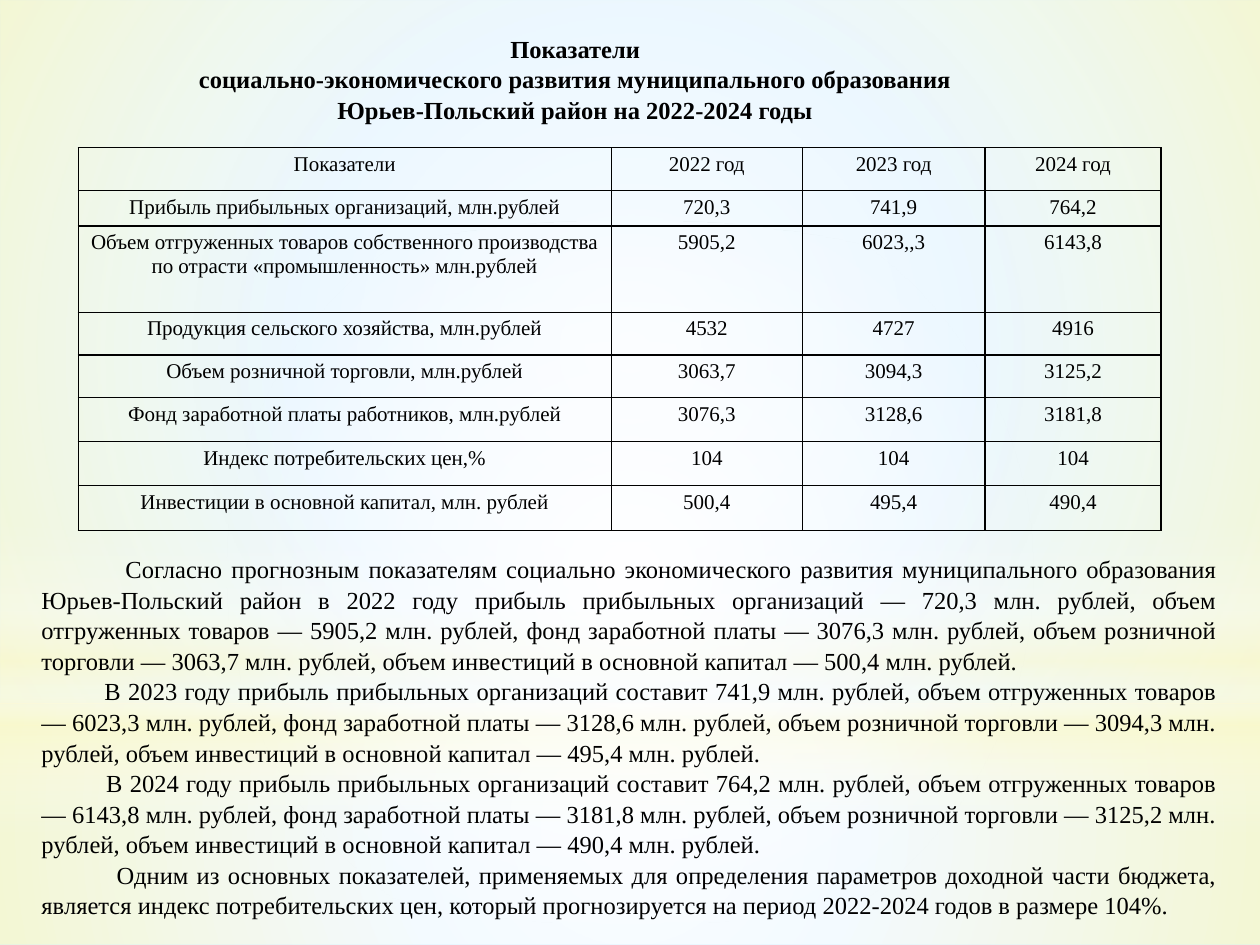
import pptx
import pptx.util
import pptx.dml.color
import pptx.enum.shapes
import pptx.enum.text
import pptx.oxml
import pptx.oxml.ns

Pt = pptx.util.Pt
ALIGN = pptx.enum.text.PP_ALIGN
SHAPE = pptx.enum.shapes.MSO_SHAPE
NS = pptx.oxml.ns.nsdecls("a")


def color(hex_string):
    return pptx.dml.color.RGBColor.from_string(hex_string)


def write(frame, text, size=14, bold=False, align=ALIGN.CENTER, indent=0,
          spacing=None, first=True):
    paragraph = frame.paragraphs[0] if first else frame.add_paragraph()
    if indent:
        paragraph._p.get_or_add_pPr().set("indent", str(Pt(indent)))
    paragraph.alignment = align
    paragraph.line_spacing = spacing
    run = paragraph.add_run()
    run.text = text
    run.font.name = "Times New Roman"
    run.font.size = Pt(size)
    run.font.bold = bold
    run.font.color.rgb = color("000000")


deck = pptx.Presentation()
deck.slide_width, deck.slide_height = Pt(720), Pt(540)
slide = deck.slides.add_slide(deck.slide_layouts[6])

# Background: soft glows over pale blue; stops are position, colour, opacity
slide.background.fill.solid()
slide.background.fill.fore_color.rgb = color("CCECFF")
WHITE, CREAM = "FFFFFF", "FEFAC9"
RADIAL = ('<a:path path="circle"><a:fillToRect l="50000" t="50000" '
          'r="50000" b="50000"/></a:path>')
LINEAR = '<a:lin ang="5400000" scaled="0"/>'
glows = [
    (SHAPE.RECTANGLE, 402, 138, RADIAL,
     [(0, WHITE, 91), (37, WHITE, 76), (100, CREAM, 79)]),
    (SHAPE.RECTANGLE, 0, 402, RADIAL,
     [(0, WHITE, 89), (48, WHITE, 62), (100, CREAM, 79)]),
    (SHAPE.RECTANGLE, 297, 180, LINEAR,
     [(0, WHITE, 0), (29, WHITE, 30), (45, CREAM, 40),
      (55, WHITE, 26), (65, CREAM, 60), (100, WHITE, 0)]),
    (SHAPE.OVAL, 126, 402, RADIAL, [(0, WHITE, 100), (56, WHITE, 0)]),
]
for kind, top, height, direction, stops in glows:
    glow = slide.shapes.add_shape(kind, 0, Pt(top), Pt(720), Pt(height))
    glow.shadow.inherit = False
    glow.line.fill.background()
    glow.fill.background()
    stop_xml = "".join(
        f'<a:gs pos="{place * 1000}"><a:srgbClr val="{color(tint)}">'
        f'<a:alpha val="{opacity * 1000}"/></a:srgbClr></a:gs>'
        for place, tint, opacity in stops)
    gradient = pptx.oxml.parse_xml(
        f'<a:gradFill {NS} rotWithShape="1"><a:gsLst>{stop_xml}</a:gsLst>'
        f'{direction}</a:gradFill>')
    properties = glow._element.spPr
    properties.replace(properties.find(pptx.oxml.ns.qn("a:noFill")), gradient)

# Table of indicators
indicators = [
    ("Показатели", "2022 год", "2023 год", "2024 год"),
    ("Прибыль прибыльных организаций, млн.рублей", "720,3", "741,9", "764,2"),
    ("Объем отгруженных товаров собственного производства по отрасти "
     "«промышленность» млн.рублей", "5905,2", "6023,,3", "6143,8"),
    ("Продукция сельского хозяйства, млн.рублей", "4532", "4727", "4916"),
    ("Объем розничной торговли, млн.рублей", "3063,7", "3094,3", "3125,2"),
    ("Фонд заработной платы работников, млн.рублей",
     "3076,3", "3128,6", "3181,8"),
    ("Индекс потребительских цен,%", "104", "104", "104"),
    ("Инвестиции в основной капитал, млн. рублей", "500,4", "495,4", "490,4"),
]
column_widths = [304.6, 109.2, 104.4, 100.6]
row_heights = [24.4, 20.4, 49.2, 24.5, 24.5, 25.2, 24.9, 25.8]
table = slide.shapes.add_table(
    len(row_heights), len(column_widths), Pt(44.7), Pt(84.4),
    Pt(sum(column_widths)), Pt(sum(row_heights))).table
table.first_row = table.horz_banding = False
for column, width in zip(table.columns, column_widths):
    column.width = Pt(width)
for row, height, values in zip(table.rows, row_heights, indicators):
    row.height = Pt(height)
    for cell, value in zip(row.cells, values):
        cell.margin_left = cell.margin_right = Pt(3)
        cell.margin_top = cell.margin_bottom = Pt(3)
        for side in ("lnL", "lnR", "lnT", "lnB"):
            cell._tc.get_or_add_tcPr().append(pptx.oxml.parse_xml(
                f'<a:{side} {NS} w="{Pt(0.75)}"><a:solidFill><a:srgbClr '
                f'val="{color("000000")}"/></a:solidFill></a:{side}>'))
        cell.fill.background()
        write(cell.text_frame, value, size=12)

# Heading
heading = slide.shapes.add_textbox(Pt(50.4), Pt(15), Pt(556.6), Pt(58)).text_frame
heading.word_wrap = True
heading_lines = [
    "Показатели",
    "социально-экономического развития муниципального образования",
    "Юрьев-Польский район на 2022-2024 годы",
]
for number, line in enumerate(heading_lines):
    write(heading, line, bold=True, spacing=1.04, first=number == 0)

# Forecast commentary: first-line indent and text
forecast = slide.shapes.add_textbox(Pt(16.6), Pt(312.5), Pt(686), Pt(211)).text_frame
forecast.word_wrap = True
forecast_paragraphs = [
    (48, "Согласно прогнозным показателям социально экономического развития "
         "муниципального образования Юрьев-Польский район в 2022 году прибыль "
         "прибыльных организаций — 720,3 млн. рублей, объем отгруженных "
         "товаров — 5905,2 млн. рублей, фонд заработной платы — 3076,3 млн. "
         "рублей, объем розничной торговли — 3063,7 млн. рублей, объем "
         "инвестиций в основной капитал — 500,4 млн. рублей."),
    (36, "В 2023 году прибыль прибыльных организаций составит 741,9 млн. "
         "рублей, объем отгруженных товаров — 6023,3 млн. рублей, фонд "
         "заработной платы — 3128,6 млн. рублей, объем розничной торговли — "
         "3094,3 млн. рублей, объем инвестиций в основной капитал — 495,4 "
         "млн. рублей."),
    (37, "В 2024 году прибыль прибыльных организаций составит 764,2 млн. "
         "рублей, объем отгруженных товаров — 6143,8 млн. рублей, фонд "
         "заработной платы — 3181,8 млн. рублей, объем розничной торговли — "
         "3125,2 млн. рублей, объем инвестиций в основной капитал — 490,4 "
         "млн. рублей."),
    (43, "Одним из основных показателей, применяемых для определения "
         "параметров доходной части бюджета, является индекс потребительских "
         "цен, который прогнозируется на период 2022-2024 годов в размере "
         "104%."),
]
for number, (indent, text) in enumerate(forecast_paragraphs):
    write(forecast, text, align=ALIGN.JUSTIFY, indent=indent, spacing=1.04,
          first=number == 0)

deck.save("out.pptx")
